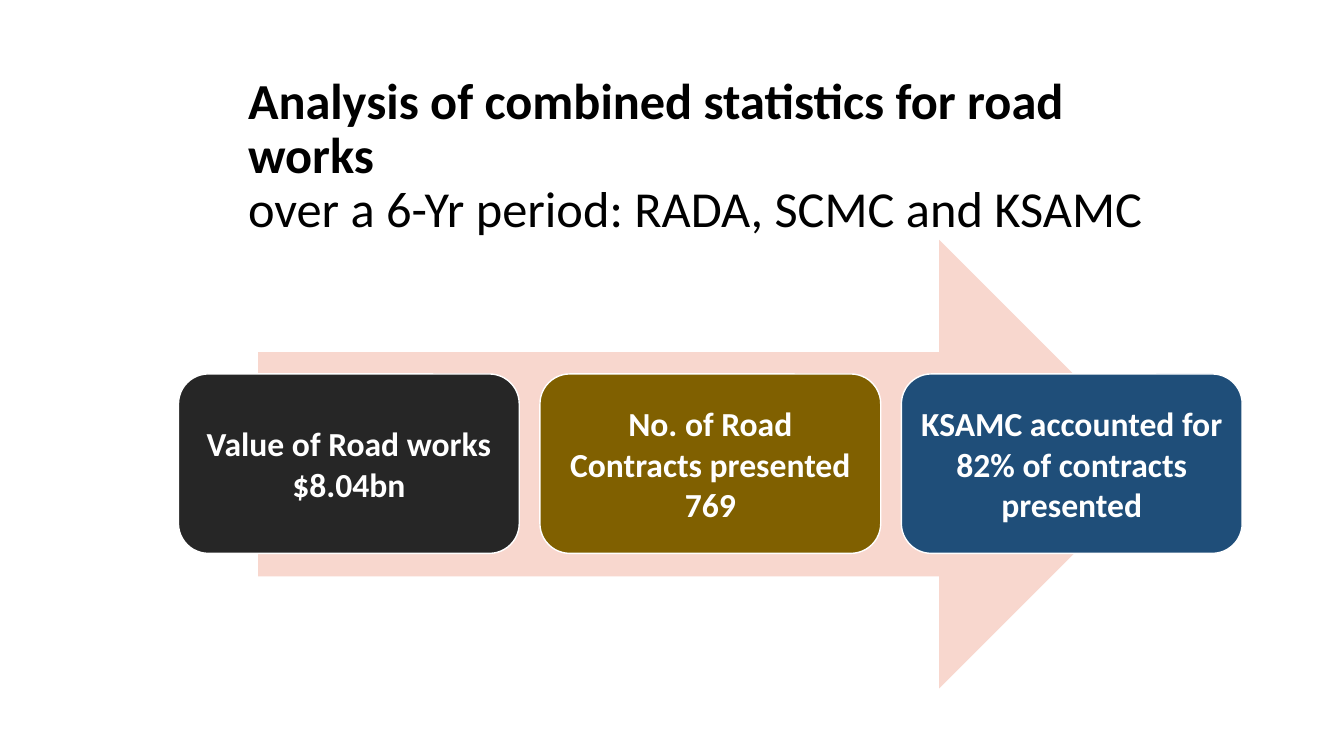
from pptx import Presentation
from pptx.dml.color import RGBColor
from pptx.enum.shapes import MSO_SHAPE
from pptx.enum.text import MSO_ANCHOR, MSO_AUTO_SIZE, PP_ALIGN
from pptx.util import Inches, Pt

BLACK = RGBColor(0x00, 0x00, 0x00)
WHITE = RGBColor(0xFF, 0xFF, 0xFF)
PINK = RGBColor(0xF8, 0xD7, 0xCE)
CHARCOAL = RGBColor(0x26, 0x26, 0x26)
OLIVE = RGBColor(0x80, 0x60, 0x00)
NAVY = RGBColor(0x1F, 0x4E, 0x79)

CARD_LEFT = 1.77
CARD_STEP = 3.585
CARDS = [
    (CHARCOAL, ["Value of Road works", "$8.04bn"]),
    (OLIVE, ["No. of Road Contracts presented", "769"]),
    (NAVY, ["KSAMC accounted for", "82% of contracts presented"]),
]


def add_text(para, text, size, color, bold=False):
    span = para.add_run()
    span.text = text
    span.font.name = "Calibri"
    span.font.size = Pt(size)
    span.font.bold = bold
    span.font.color.rgb = color


def add_title(page, heading, subheading):
    title = page.shapes.title
    title.left, title.top = Inches(2.36), Inches(0.85)
    title.width, title.height = Inches(9.23), Inches(1.42)
    frame = title.text_frame
    frame.word_wrap = True
    frame.auto_size = MSO_AUTO_SIZE.NONE
    frame.vertical_anchor = MSO_ANCHOR.MIDDLE
    para = frame.paragraphs[0]
    para.alignment = PP_ALIGN.LEFT
    para.line_spacing = 0.9
    add_text(para, heading, 36, BLACK, bold=True)
    para.add_line_break()
    add_text(para, subheading, 36, BLACK)


def add_block(page, kind, left, top, width, height, fill):
    block = page.shapes.add_shape(
        kind, Inches(left), Inches(top), Inches(width), Inches(height))
    block.shadow.inherit = False
    block.fill.solid()
    block.fill.fore_color.rgb = fill
    block.line.fill.background()
    return block


def add_card(page, left, fill, lines):
    card = add_block(page, MSO_SHAPE.ROUNDED_RECTANGLE, left, 3.71, 3.38, 1.78, fill)
    card.line.color.rgb = WHITE
    card.line.width = Pt(1)
    frame = card.text_frame
    frame.word_wrap = True
    frame.vertical_anchor = MSO_ANCHOR.MIDDLE
    frame.margin_left = frame.margin_right = Inches(0.1)
    frame.margin_top = frame.margin_bottom = Inches(0.1)
    for index, line in enumerate(lines):
        para = frame.add_paragraph() if index else frame.paragraphs[0]
        para.alignment = PP_ALIGN.CENTER
        add_text(para, line, 24, WHITE, bold=True)


def main():
    deck = Presentation()
    deck.slide_width, deck.slide_height = Inches(13.33), Inches(7.5)
    page = deck.slides.add_slide(deck.slide_layouts.get_by_name("Title Only"))
    add_title(page, "Analysis of combined statistics for road works",
              "over a 6-Yr period: RADA, SCMC and KSAMC")
    add_block(page, MSO_SHAPE.RIGHT_ARROW, 2.56, 2.38, 8.98, 4.45, PINK)
    for index, (fill, lines) in enumerate(CARDS):
        add_card(page, CARD_LEFT + index * CARD_STEP, fill, lines)
    deck.save("out.pptx")


if __name__ == "__main__":
    main()
